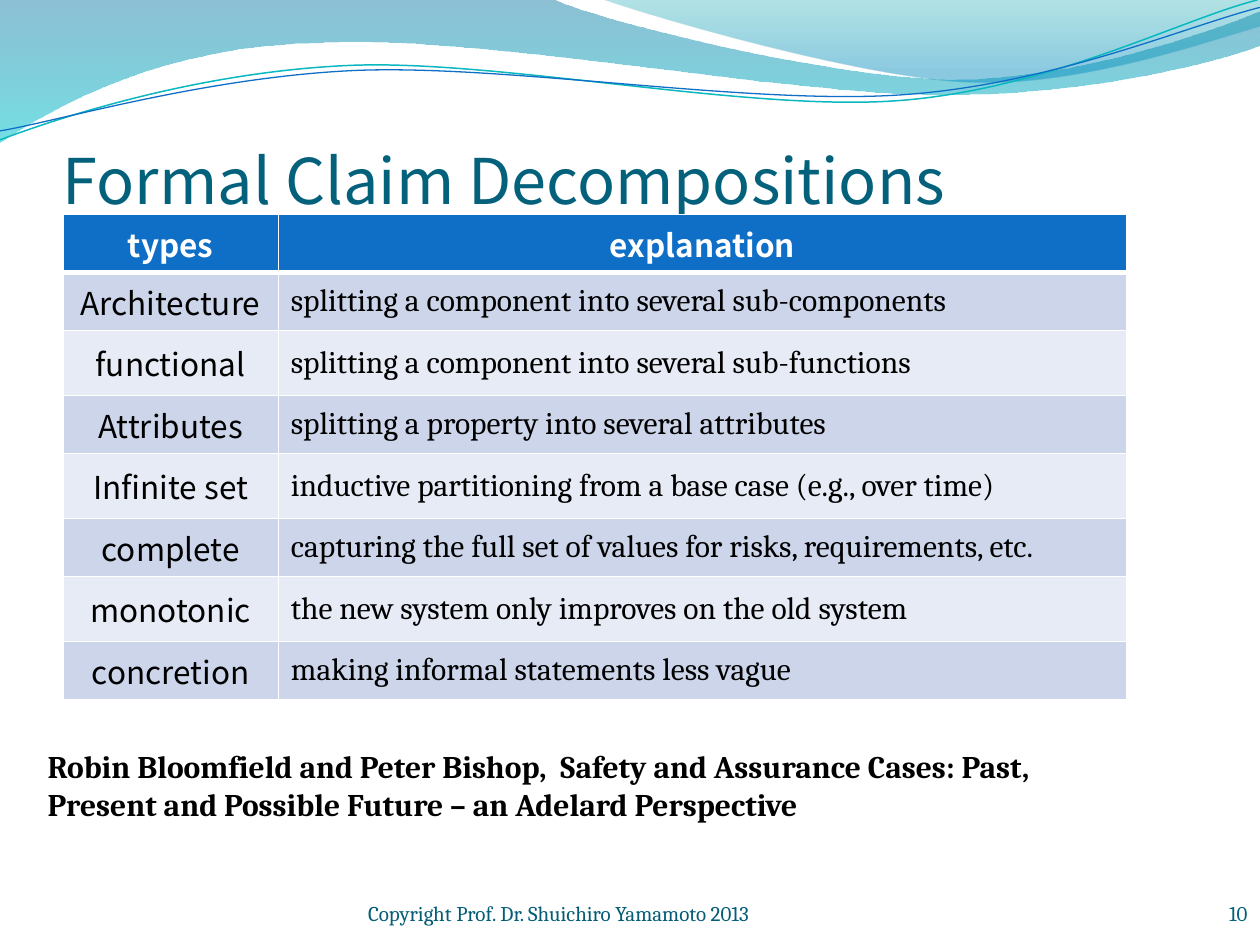
from lxml.etree import SubElement
from pptx import Presentation
from pptx.dml.color import RGBColor
from pptx.enum.text import MSO_ANCHOR, PP_ALIGN
from pptx.oxml import parse_xml
from pptx.oxml.ns import nsdecls, qn
from pptx.util import Cm, Pt

WHITE = RGBColor(0xFF, 0xFF, 0xFF)
BLACK = RGBColor(0x00, 0x00, 0x00)
TITLE_TEAL = RGBColor(0x04, 0x61, 0x7B)
FOOTER_TEAL = RGBColor(0x04, 0x5D, 0x75)
BLUE = RGBColor(0x0F, 0x6F, 0xC6)
TEAL = RGBColor(0x0A, 0xB8, 0xBF)
BAND_DARK = RGBColor(0xCC, 0xD5, 0xEA)
BAND_LIGHT = RGBColor(0xE7, 0xEB, 0xF5)
DEEP_SEA = RGBColor(0x00, 0x74, 0xA1)
AQUA = RGBColor(0x00, 0xC6, 0xCF)
LAGOON = RGBColor(0x00, 0xA1, 0xA9)
SKY = RGBColor(0x00, 0x8B, 0xBF)

SANS = "Noto Sans CJK JP"
SERIF = "Cambria"

# Outlines in cm: a pair is a straight step, six numbers are a Bézier curve.
WIDE_WAVE = [
    (0, 0), (11.18, 0),
    (12.09, 0.43, 16.87, 1.6, 19.25, 1.6),
    (21.67, 1.6, 24.33, 0.66, 25.4, 0.23),
    (25.4, 0.91),
    (24.97, 1.12, 22.1, 1.93, 18.95, 1.91),
    (15.75, 1.91, 9.7, 0.71, 6.53, 0.86),
    (3.28, 0.91, 1.17, 2.11, 0, 2.87),
]
RIGHT_WAVE = [
    (12.17, 0),
    (12.93, 0.28, 17.32, 1.57, 19.53, 1.65),
    (21.74, 1.75, 24.41, 0.81, 25.4, 0.53),
    (25.4, 0),
]
TEAL_STRAND = [
    (0, 2.82),
    (1.22, 2.36, 4.01, 1.45, 7.04, 1.32),
    (10.03, 1.19, 15.06, 2.26, 18.11, 2.03),
    (21.16, 1.8, 23.83, 0.38, 25.35, 0),
]
BLUE_STRAND = [
    (0, 2.64),
    (1.19, 2.44, 4.17, 1.55, 7.19, 1.42),
    (10.24, 1.3, 15.16, 2.13, 18.21, 1.91),
    (21.23, 1.7, 23.9, 0.53, 25.4, 0.15),
]

TABLE_ROWS = [
    ("types", "explanation"),
    ("Architecture", "splitting a component into several sub-components"),
    ("functional", "splitting a component into several sub-functions"),
    ("Attributes", "splitting a property into several attributes"),
    ("Infinite set", "inductive partitioning from a base case (e.g., over time)"),
    ("complete", "capturing the full set of values for risks, requirements, etc."),
    ("monotonic", "the new system only improves on the old system"),
    ("concretion", "making informal statements less vague"),
]
CITATION = ("Robin Bloomfield and Peter Bishop,  Safety and Assurance Cases: "
            "Past, Present and Possible Future – an Adelard Perspective")


def write_text(text_frame, text, color, align=PP_ALIGN.LEFT, **font_format):
    paragraph = text_frame.paragraphs[0]
    paragraph.alignment = align
    run = paragraph.add_run()
    run.text = text
    for name, value in font_format.items():
        setattr(run.font, name, value)
    run.font.color.rgb = color


def add_text(slide, box, text, color, frame_format=None, **text_format):
    text_frame = slide.shapes.add_textbox(*box).text_frame
    text_frame.word_wrap = True
    for name, value in (frame_format or {}).items():
        setattr(text_frame, name, value)
    write_text(text_frame, text, color, **text_format)


def add_outline(slide, left, top, steps, closed):
    """Build a freeform, then join the three points of each curve into one Bézier step."""
    points = [(Cm(x), Cm(y)) for step in steps for x, y in zip(step[::2], step[1::2])]
    builder = slide.shapes.build_freeform(*points[0], scale=1.0)
    builder.add_line_segments(points[1:], close=closed)
    shape = builder.convert_to_shape(left, top)
    shape.shadow.inherit = False
    segments = iter(list(shape.element.iter(qn("a:lnTo"))))
    for step in steps[1:]:
        segment = next(segments)
        if len(step) == 6:
            curve = parse_xml(f'<a:cubicBezTo {nsdecls("a")}/>')
            segment.addprevious(curve)
            for part in (segment, next(segments), next(segments)):
                curve.append(part[0])
                part.getparent().remove(part)
    return shape


def add_wave(slide, left, top, steps, stops):
    """Add a filled wave; each stop is position, colour and opacity in percent."""
    shape = add_outline(slide, left, top, steps, True)
    shape.line.fill.background()
    shape.fill.gradient()
    shape.fill.gradient_angle = 270
    for stop, (position, color, _) in zip(shape.fill.gradient_stops, stops):
        stop.position = position
        stop.color.rgb = color
    for element, (_, _, opacity) in zip(shape.element.iter(qn("a:srgbClr")), stops):
        SubElement(element, qn("a:alpha"), val=str(opacity * 1000))


def add_strand(slide, left, top, steps, color, width):
    shape = add_outline(slide, left, top, steps, False)
    shape.fill.background()
    shape.line.color.rgb = color
    shape.line.width = width


def add_wave_banner(slide, left, top):
    add_wave(slide, left, top, WIDE_WAVE, [(0, DEEP_SEA, 45), (1, AQUA, 55)])
    add_wave(slide, left, top, RIGHT_WAVE, [(0, LAGOON, 30), (0.8, SKY, 45)])
    add_strand(slide, left, top, TEAL_STRAND, TEAL, Pt(0.85))
    add_strand(slide, left, top, BLUE_STRAND, BLUE, Pt(0.75))


def set_borders(cell, top, bottom):
    """Draw white borders; the side borders are one point wide."""
    properties = cell._tc.get_or_add_tcPr()
    widths = {"lnL": Pt(1), "lnR": Pt(1), "lnT": top, "lnB": bottom}
    for index, (side, width) in enumerate(widths.items()):
        properties.insert(index, parse_xml(
            f'<a:{side} {nsdecls("a")} w="{width}"><a:solidFill>'
            f'<a:srgbClr val="{WHITE}"/></a:solidFill></a:{side}>'))


def add_claim_table(slide, left, top, width, height):
    table = slide.shapes.add_table(len(TABLE_ROWS), 2, left, top, width, height).table
    table.columns[0].width = Cm(4.34)
    table.columns[1].width = width - Cm(4.34)
    for row, texts in enumerate(TABLE_ROWS):
        is_header = row == 0
        is_light = not is_header and row % 2 == 0
        table.rows[row].height = Cm(1.31) if is_light else Cm(1.17)
        fill_color = BLUE if is_header else BAND_LIGHT if is_light else BAND_DARK
        for column, text in enumerate(texts):
            is_label = is_header or column == 0
            cell = table.cell(row, column)
            cell.vertical_anchor = MSO_ANCHOR.MIDDLE
            cell.fill.solid()
            cell.fill.fore_color.rgb = fill_color
            set_borders(cell, Pt(3 if row == 1 else 1), Pt(3 if is_header else 1))
            write_text(cell.text_frame, text, WHITE if is_header else BLACK,
                       align=PP_ALIGN.CENTER if is_label else PP_ALIGN.LEFT,
                       name=SANS if is_label else SERIF, size=Pt(18), bold=is_header)


def add_footer(slide, left, top, width, height):
    no_margins = dict.fromkeys(
        ("margin_left", "margin_top", "margin_right", "margin_bottom"), 0)
    add_text(slide, (left + Cm(7.42), top, Cm(9.32), Cm(1.02)),
             "Copyright Prof. Dr. Shuichiro Yamamoto 2013", FOOTER_TEAL,
             {"vertical_anchor": MSO_ANCHOR.BOTTOM, **no_margins},
             name=SERIF, size=Pt(12))
    add_text(slide, (left + width - Cm(2.11), top + height - Cm(1.02), Cm(2.11), Cm(1.02)),
             "10", TITLE_TEAL, align=PP_ALIGN.RIGHT, name=SERIF, size=Pt(12))


def main():
    presentation = Presentation()
    presentation.slide_width = Cm(25.4)
    presentation.slide_height = Cm(19.05)
    slide = presentation.slides.add_slide(presentation.slide_layouts[6])
    add_wave_banner(slide, Cm(0), Cm(0))
    add_text(slide, (Cm(1.27), Cm(1.96), Cm(22.86), Cm(3.18)),
             "Formal Claim Decompositions", TITLE_TEAL,
             {"vertical_anchor": MSO_ANCHOR.MIDDLE, "margin_left": 0,
              "margin_right": 0, "margin_bottom": 0},
             name=SANS, size=Pt(36))
    add_claim_table(slide, Cm(1.27), Cm(4.32), Cm(21.44), Cm(9.78))
    add_text(slide, (Cm(0.71), Cm(14.94), Cm(22.61), Cm(1.8)),
             CITATION, BLACK, name=SERIF, size=Pt(18), bold=True)
    add_footer(slide, Cm(0), Cm(17.65), Cm(25.4), Cm(1.4))
    presentation.save("out.pptx")


if __name__ == "__main__":
    main()
